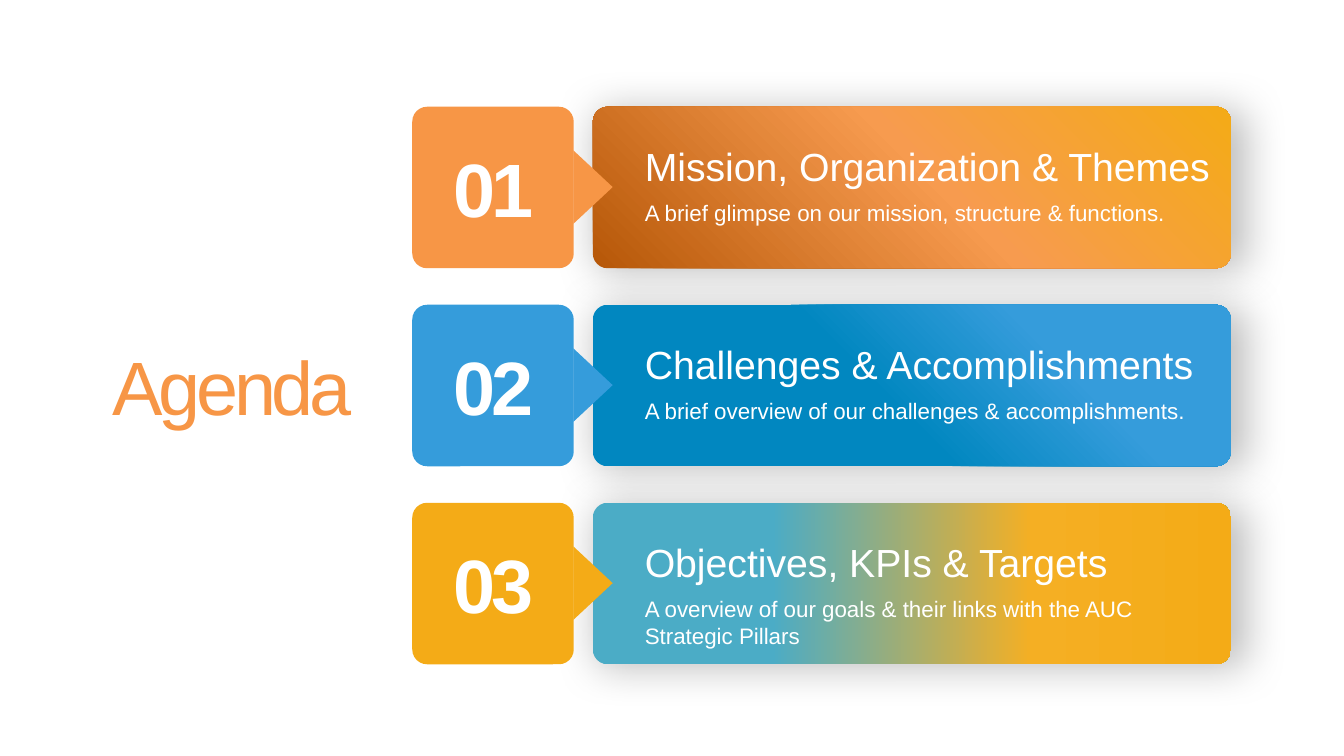
from dataclasses import dataclass

from lxml import etree
from pptx import Presentation
from pptx.dml.color import RGBColor
from pptx.enum.shapes import MSO_SHAPE
from pptx.enum.text import MSO_ANCHOR, MSO_AUTO_SIZE, PP_ALIGN
from pptx.oxml.ns import qn
from pptx.util import Cm, Pt

ROUNDED = MSO_SHAPE.ROUNDED_RECTANGLE
TRIANGLE = MSO_SHAPE.ISOSCELES_TRIANGLE
LEFT, CENTER, RIGHT = PP_ALIGN.LEFT, PP_ALIGN.CENTER, PP_ALIGN.RIGHT
MIDDLE, TOP = MSO_ANCHOR.MIDDLE, MSO_ANCHOR.TOP
NO_AUTOSIZE = MSO_AUTO_SIZE.NONE
TITLE_ONLY = 5


@dataclass(frozen=True)
class Theme:
    font: str = "Arial"
    white: str = "FFFFFF"
    orange: str = "F79646"
    light_orange: str = "F79B4F"
    brown: str = "B65708"
    blue: str = "359CDB"
    deep_blue: str = "0187C0"
    teal: str = "4BACC6"
    amber: str = "F4AB17"
    light_amber: str = "F5AF23"
    shadow: str = "000000"
    display_size: int = 54
    heading_size: int = 28
    body_size: int = 16
    tracking: int = -3
    corner: float = 0.092


THEME = Theme()
ROW_TOP, ROW_PITCH, ROW_HEIGHT = 2.69, 4.99, 4.07
FROM_TOP_RIGHT = {"l": "100000", "b": "100000"}
ITEMS = [
    ("01", "Mission, Organization & Themes",
     "A brief glimpse on our mission, structure & functions.", 14.7, THEME.orange,
     [(0, THEME.amber), (46, THEME.light_orange), (100, THEME.brown)], FROM_TOP_RIGHT),
    ("02", "Challenges & Accomplishments",
     "A brief overview of our challenges & accomplishments.", 14.7, THEME.blue,
     [(28, THEME.blue), (55, THEME.deep_blue), (100, THEME.deep_blue)], FROM_TOP_RIGHT),
    ("03", "Objectives, KPIs & Targets",
     "A overview of our goals & their links with the AUC Strategic Pillars", 13.97,
     THEME.amber,
     [(28, THEME.teal), (69, THEME.light_amber), (100, THEME.amber)], None),
]


def add_element(parent, tag, **attributes):
    return etree.SubElement(parent, qn(tag), attributes)


class AgendaSlide:
    def __init__(self, presentation, theme):
        self.theme = theme
        self.slide = presentation.slides.add_slide(presentation.slide_layouts[TITLE_ONLY])

    def set_text(self, shape, text, size, color, align=LEFT, anchor=TOP, bold=False,
                 tracking=0):
        frame = shape.text_frame
        frame.text = text
        frame.word_wrap = True
        frame.auto_size = NO_AUTOSIZE
        frame.vertical_anchor = anchor
        paragraph = frame.paragraphs[0]
        paragraph.alignment = align
        run = paragraph.runs[0]
        run.font.name = self.theme.font
        run.font.size = Pt(size)
        run.font.bold = bold
        run.font.color.rgb = RGBColor.from_string(color)
        if tracking:
            run.font._element.set("spc", str(tracking * 100))

    def title(self, text, left, top, width, height):
        shape = self.slide.shapes.title
        shape.left, shape.top = Cm(left), Cm(top)
        shape.width, shape.height = Cm(width), Cm(height)
        self.set_text(shape, text, self.theme.display_size, self.theme.orange, RIGHT, MIDDLE,
                      tracking=self.theme.tracking)

    def text(self, group, box, text, size, **style):
        shape = group.shapes.add_textbox(*map(Cm, box))
        self.set_text(shape, text, size, self.theme.white, **style)

    def shape(self, group, kind, box, color):
        shape = group.shapes.add_shape(kind, *map(Cm, box))
        shape.shadow.inherit = False
        shape.fill.solid()
        shape.fill.fore_color.rgb = RGBColor.from_string(color)
        shape.line.fill.background()
        if kind == ROUNDED:
            shape.adjustments[0] = self.theme.corner
        return shape

    def gradient_card(self, group, box, color, stops, focus):
        properties = self.shape(group, ROUNDED, box, color)._element.spPr
        gradient = etree.Element(qn("a:gradFill"), rotWithShape="1")
        stop_list = add_element(gradient, "a:gsLst")
        for position, stop_color in stops:
            stop = add_element(stop_list, "a:gs", pos=str(position * 1000))
            add_element(stop, "a:srgbClr", val=stop_color)
        if focus:
            circle = add_element(gradient, "a:path", path="circle")
            add_element(circle, "a:fillToRect", **focus)
        else:
            add_element(gradient, "a:lin", ang="0", scaled="0")
        properties.replace(properties.find(qn("a:solidFill")), gradient)
        shadow = add_element(properties.find(qn("a:effectLst")), "a:outerShdw",
                             blurRad=str(Pt(30)), dist=str(Pt(3)), dir="2700000",
                             sx="102000", algn="l", rotWithShape="0")
        shadow_color = add_element(shadow, "a:srgbClr", val=self.theme.shadow)
        add_element(shadow_color, "a:alpha", val="25000")

    def agenda_item(self, top, number, heading, detail, detail_width, color, stops, focus):
        theme = self.theme
        group = self.slide.shapes.add_group_shape()
        self.gradient_card(group, (14.94, top, 16.08, ROW_HEIGHT), color, stops, focus)
        self.text(group, (16, top + 2.21, detail_width, 1.63), detail, theme.body_size)
        self.text(group, (16, top + 0.76, 15.04, 1.45), heading, theme.heading_size)
        self.shape(group, ROUNDED, (10.39, top, ROW_HEIGHT, ROW_HEIGHT), color)
        pointer = self.shape(group, TRIANGLE, (14.02, top + 1.53, 1.85, 0.99), color)
        pointer.rotation = 90
        self.text(group, (11, top + 0.76, 2.87, 2.57), number, theme.display_size,
                  align=CENTER, bold=True, tracking=theme.tracking)


def main():
    presentation = Presentation()
    presentation.slide_width, presentation.slide_height = Cm(33.87), Cm(19.05)
    agenda = AgendaSlide(presentation, THEME)
    agenda.title("Agenda", 1.55, 4.93, 7.57, 9.55)
    for row, item in enumerate(ITEMS):
        agenda.agenda_item(ROW_TOP + row * ROW_PITCH, *item)
    presentation.save("out.pptx")


if __name__ == "__main__":
    main()
